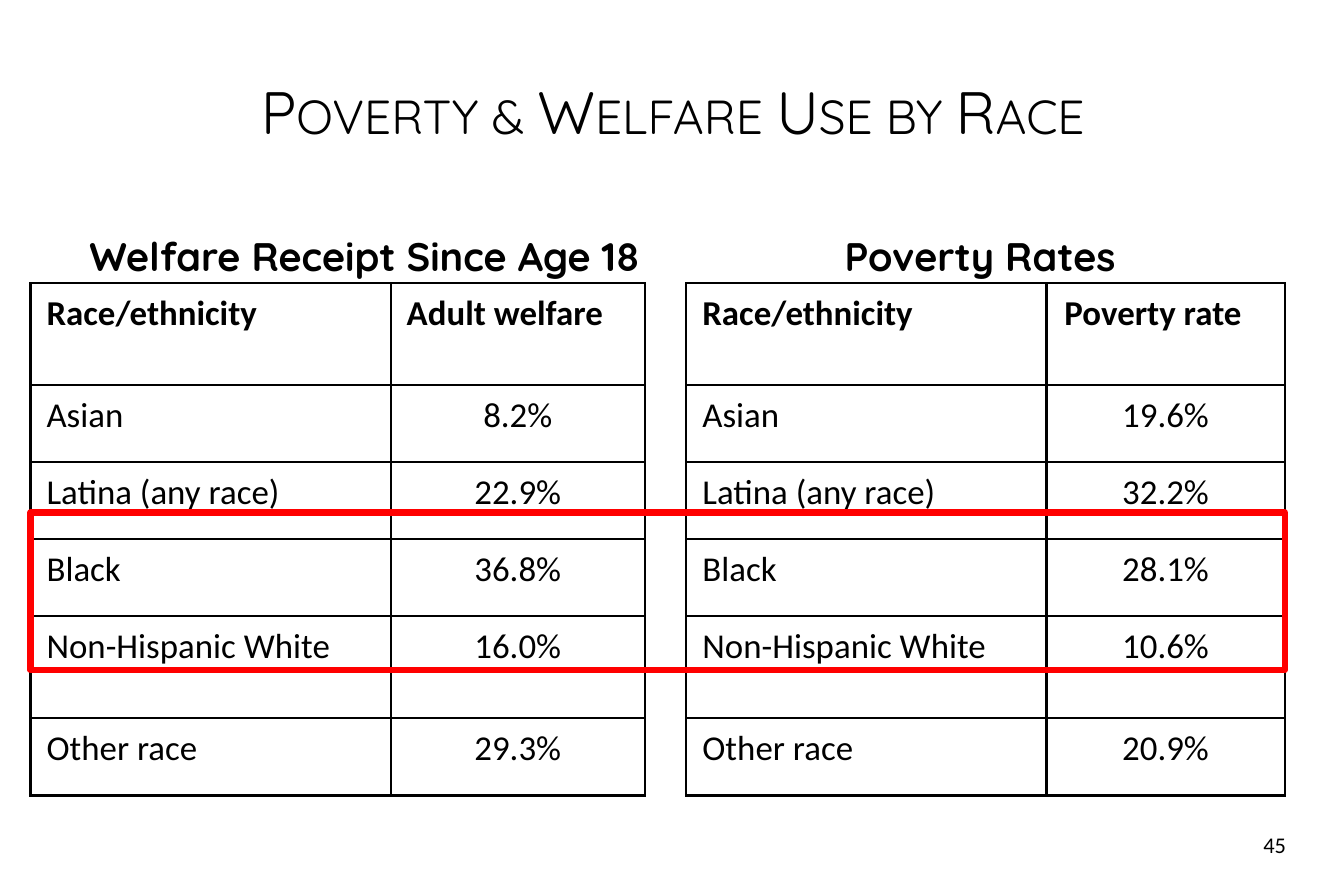
from dataclasses import dataclass

from lxml import etree
from pptx import Presentation
from pptx.dml.color import RGBColor
from pptx.enum.shapes import MSO_SHAPE
from pptx.enum.text import MSO_ANCHOR, PP_ALIGN
from pptx.oxml.ns import qn
from pptx.util import Inches, Pt

RECTANGLE = MSO_SHAPE.RECTANGLE
TOP, MIDDLE, BOTTOM = MSO_ANCHOR.TOP, MSO_ANCHOR.MIDDLE, MSO_ANCHOR.BOTTOM
LEFT, CENTER = PP_ALIGN.LEFT, PP_ALIGN.CENTER

SLIDE_WIDTH, SLIDE_HEIGHT = 7.5, 5
GRID_COLUMNS, GRID_ROWS = 750, 500
BLACK, WHITE, RED = "000000", "FFFFFF", "FF0000"
HEADING_FONT, BODY_FONT = "Quicksand", "Calibri"
TABLE_TOP = 158
ROW_HEIGHTS = (57, 43, 43, 43, 57, 43)
RACES = ("Asian", "Latina (any race)", "Black", "Non-Hispanic White", "Other race")


@dataclass(frozen=True)
class Box:
    left: float
    top: float
    width: float
    height: float

    def lengths(self) -> tuple:
        return (across(self.left), down(self.top), across(self.width), down(self.height))


@dataclass(frozen=True)
class TextStyle:
    font: str
    size: float
    bold: bool = False
    small_caps: bool = False


@dataclass(frozen=True)
class RateTable:
    heading: str
    heading_box: Box
    left: float
    column_widths: tuple[float, float]
    rate_name: str
    rates: tuple[str, ...]
    rate_inset: float


TITLE_STYLE = TextStyle(HEADING_FONT, 24, small_caps=True)
HEADING_STYLE = TextStyle(HEADING_FONT, 16, bold=True)
HEADER_STYLE = TextStyle(BODY_FONT, 14, bold=True)
CELL_STYLE = TextStyle(BODY_FONT, 14)
NUMBER_STYLE = TextStyle(BODY_FONT, 9)

RATE_TABLES = (
    RateTable("Welfare Receipt Since Age 18", Box(38, 112, 331, 47), 17, (201, 142),
              "Adult welfare", ("8.2%", "22.9%", "36.8%", "16.0%", "29.3%"), 9),
    RateTable("Poverty Rates", Box(381, 112, 332, 47), 383, (201, 133),
              "Poverty rate", ("19.6%", "32.2%", "28.1%", "10.6%", "20.9%"), 10),
)


def across(columns: float) -> int:
    return Inches(SLIDE_WIDTH * columns / GRID_COLUMNS)


def down(rows: float) -> int:
    return Inches(SLIDE_HEIGHT * rows / GRID_ROWS)


def color(value: str) -> RGBColor:
    return RGBColor.from_string(value)


def write(paragraph, text: str, style: TextStyle, alignment: PP_ALIGN) -> None:
    paragraph.alignment = alignment
    run = paragraph.add_run()
    run.text = text
    run.font.name = style.font
    run.font.size = Pt(style.size)
    run.font.bold = style.bold
    run.font.color.rgb = color(BLACK)
    if style.small_caps:
        run.font._element.set("cap", "small")


def draw_text(slide, box: Box, text: str, style: TextStyle, anchor: MSO_ANCHOR,
              alignment: PP_ALIGN = CENTER, side_inset: float = 3) -> None:
    frame = slide.shapes.add_textbox(*box.lengths()).text_frame
    frame.word_wrap = True
    frame.vertical_anchor = anchor
    frame.margin_left = frame.margin_right = across(side_inset)
    frame.margin_top = frame.margin_bottom = down(3)
    write(frame.paragraphs[0], text, style, alignment)


def draw_borders(cell) -> None:
    properties = cell._tc.get_or_add_tcPr()
    for side in ("a:lnL", "a:lnR", "a:lnT", "a:lnB"):
        line = etree.SubElement(properties, qn(side), w=str(Pt(1)))
        fill = etree.SubElement(line, qn("a:solidFill"))
        etree.SubElement(fill, qn("a:srgbClr"), val=BLACK)


def fill_cell(cell, text: str, style: TextStyle, alignment: PP_ALIGN, inset: float) -> None:
    draw_borders(cell)
    cell.fill.solid()
    cell.fill.fore_color.rgb = color(WHITE)
    cell.margin_left = cell.margin_right = across(inset)
    cell.margin_top = cell.margin_bottom = down(5)
    cell.vertical_anchor = TOP
    write(cell.text_frame.paragraphs[0], text, style, alignment)


def draw_rate_table(slide, rate_table: RateTable) -> None:
    draw_text(slide, rate_table.heading_box, rate_table.heading, HEADING_STYLE, BOTTOM)
    box = Box(rate_table.left, TABLE_TOP, sum(rate_table.column_widths), sum(ROW_HEIGHTS))
    table = slide.shapes.add_table(len(ROW_HEIGHTS), 2, *box.lengths()).table
    table.first_row = table.horz_banding = False
    for column, width in zip(table.columns, rate_table.column_widths):
        column.width = across(width)
    for row, height in zip(table.rows, ROW_HEIGHTS):
        row.height = down(height)
    entries = [("Race/ethnicity", rate_table.rate_name), *zip(RACES, rate_table.rates)]
    for index, (race, rate) in enumerate(entries):
        style, rate_alignment = (CELL_STYLE, CENTER) if index else (HEADER_STYLE, LEFT)
        fill_cell(table.cell(index, 0), race, style, LEFT, 9)
        fill_cell(table.cell(index, 1), rate, style, rate_alignment, rate_table.rate_inset)


def draw_highlight(slide, box: Box) -> None:
    highlight = slide.shapes.add_shape(RECTANGLE, *box.lengths())
    highlight.shadow.inherit = False
    highlight.fill.background()
    highlight.line.color.rgb = color(RED)
    highlight.line.width = Pt(2.5)


def main() -> None:
    presentation = Presentation()
    presentation.slide_width = Inches(SLIDE_WIDTH)
    presentation.slide_height = Inches(SLIDE_HEIGHT)
    slide = presentation.slides.add_slide(presentation.slide_layouts[6])
    draw_text(slide, Box(38, 20, 675, 83), "Poverty & Welfare Use by Race", TITLE_STYLE, MIDDLE)
    for rate_table in RATE_TABLES:
        draw_rate_table(slide, rate_table)
    draw_text(slide, Box(703, 461, 20, 19), "45", NUMBER_STYLE, TOP, LEFT, 2)
    draw_highlight(slide, Box(17, 286, 700, 88))
    presentation.save("out.pptx")


if __name__ == "__main__":
    main()
